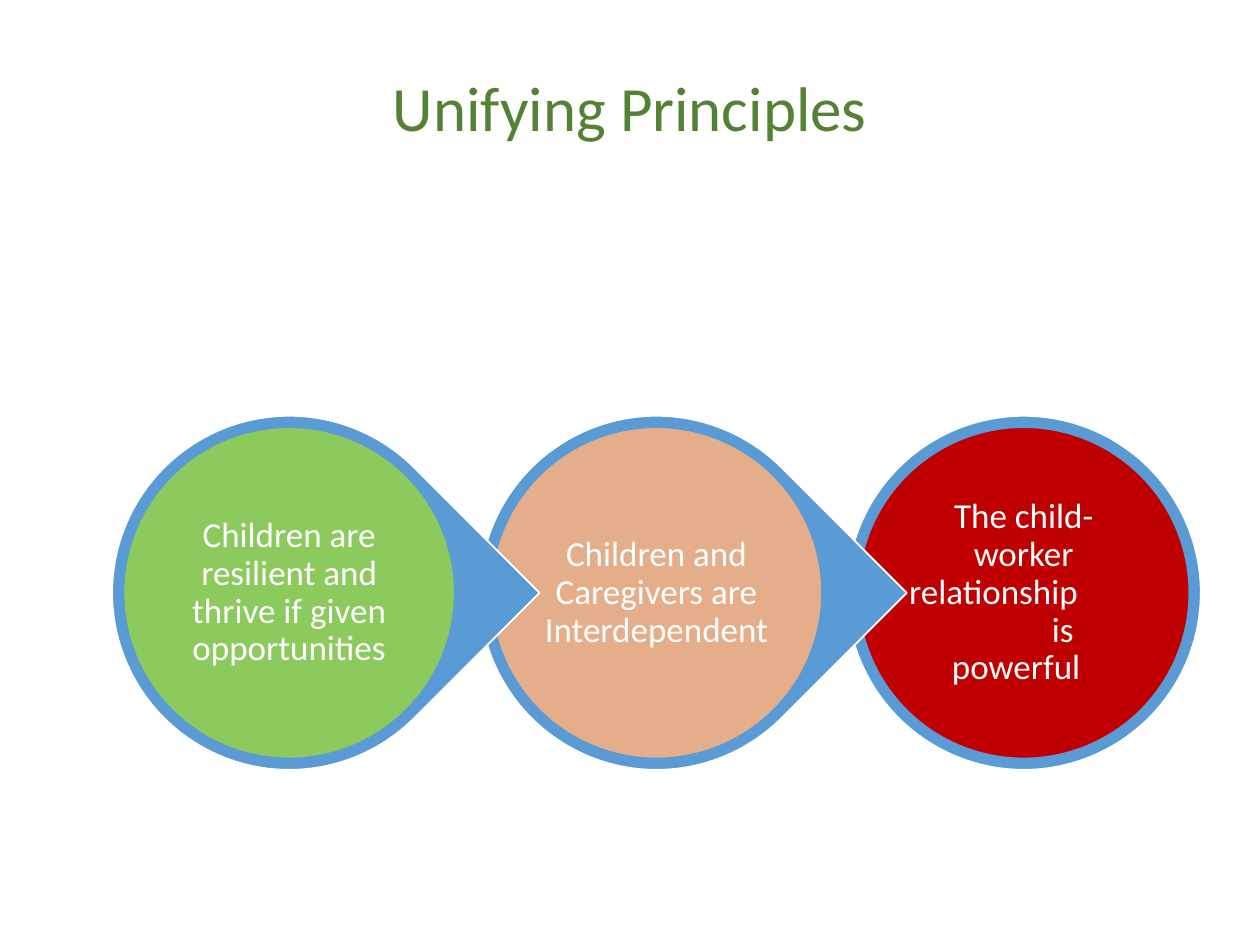
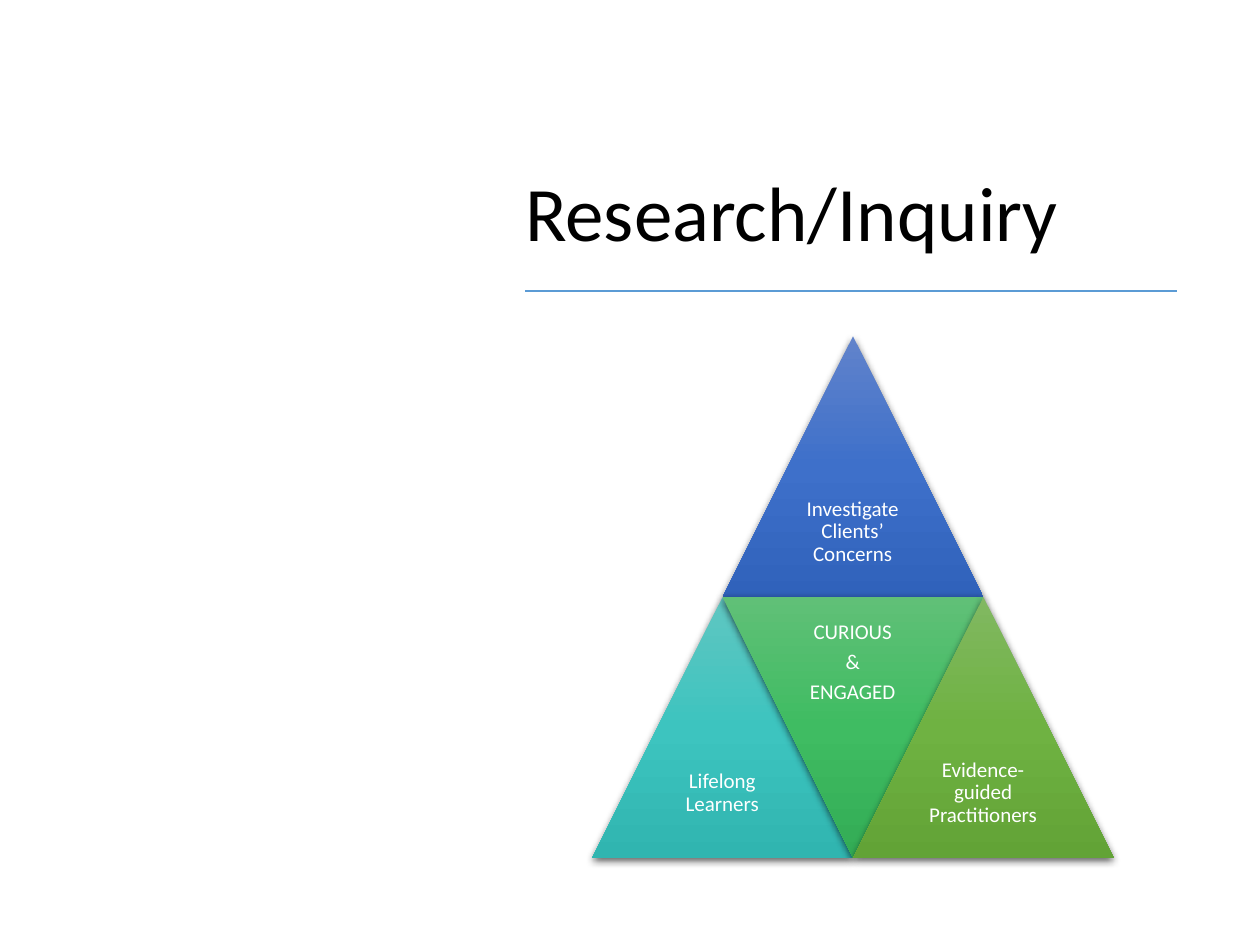
from dataclasses import dataclass

from pptx import Presentation
from pptx.dml.color import RGBColor
from pptx.enum.shapes import MSO_CONNECTOR as Connector, MSO_SHAPE as Preset
from pptx.enum.text import MSO_ANCHOR as Anchor, PP_ALIGN as Align
from pptx.oxml import parse_xml
from pptx.oxml.ns import nsdecls, qn
from pptx.util import Emu, Pt

EMU_PER_PX = 4572


@dataclass(frozen=True)
class Theme:
    font: str = "Calibri"
    white: str = "FFFFFF"
    black: str = "000000"
    blue: str = "5B9BD5"
    title_green: str = "548235"
    light_green: str = "92D050"
    orange: str = "F4B183"
    red: str = "C00000"
    title_size: int = 36
    section_size: int = 44
    principle_size: int = 20
    pyramid_size: int = 12
    line_spacing: float = 0.9
    gap_share: float = 0.35


THEME = Theme()


@dataclass(frozen=True)
class Line:
    text: str
    align: Align = Align.CENTER
    indent: int = 0


@dataclass(frozen=True)
class Principle:
    lines: tuple[Line, ...]
    color: str
    opacity: int = 90
    pointed: bool = True


@dataclass(frozen=True)
class PyramidPart:
    lines: tuple[Line, ...]
    half_steps: int
    row: int
    gradient: tuple[str, str, str]
    inverted: bool = False


PRINCIPLES = (
    Principle((Line("Children are resilient and thrive if given opportunities"),),
              THEME.light_green),
    Principle((Line("Children and Caregivers are Interdependent"),), THEME.orange),
    Principle((Line("The child-worker"),
               Line("relationship", Align.LEFT),
               Line("is", indent=124),
               Line("powerful", Align.LEFT, 68)),
              THEME.red, opacity=100, pointed=False),
)

PYRAMID = (
    PyramidPart((Line("Investigate Clients’ Concerns"),), 1, 0,
                ("6183CB", "3E70CA", "3062BB")),
    PyramidPart((Line("Lifelong Learners"),), 0, 1,
                ("60C6C1", "3DC4BF", "30B5B0")),
    PyramidPart((Line("CURIOUS"), Line("&"), Line("ENGAGED")), 1, 1,
                ("60C077", "3FBC62", "33AC55"), inverted=True),
    PyramidPart((Line("Evidence-guided Practitioners"),), 2, 1,
                ("81B861", "6FB242", "62A336")),
)


def px(length: int) -> Emu:
    return Emu(length * EMU_PER_PX)


def box(left: int, top: int, width: int, height: int) -> tuple[Emu, ...]:
    return px(left), px(top), px(width), px(height)


def centered_square(center_x: int, center_y: int, size: int) -> tuple[Emu, ...]:
    return box(center_x - size // 2, center_y - size // 2, size, size)


def add_text(slide, lines: tuple[Line, ...], area: tuple[Emu, ...], *, size: int,
             color: str = THEME.white, anchor: Anchor = Anchor.MIDDLE,
             inset: int | None = None, gap: float = 0) -> None:
    frame = slide.shapes.add_textbox(*area).text_frame
    frame.word_wrap = True
    frame.vertical_anchor = anchor
    if inset is not None:
        frame.margin_left = frame.margin_right = px(inset)
        frame.margin_top = frame.margin_bottom = px(inset)
    for index, line in enumerate(lines):
        paragraph = frame.add_paragraph() if index else frame.paragraphs[0]
        paragraph.alignment = line.align
        paragraph.line_spacing = THEME.line_spacing
        paragraph.space_after = Pt(size * gap)
        if line.indent:
            paragraph._p.get_or_add_pPr().set("marL", str(px(line.indent)))
        run = paragraph.add_run()
        run.text = line.text
        run.font.name = THEME.font
        run.font.size = Pt(size)
        run.font.color.rgb = RGBColor.from_string(color)


def add_disc(slide, preset: Preset, area: tuple[Emu, ...], fill: str, outline: str,
             *, opacity: int = 100, rotation: int = 0) -> None:
    disc = slide.shapes.add_shape(preset, *area)
    disc.shadow.inherit = False
    disc.rotation = rotation
    disc.fill.solid()
    disc.fill.fore_color.rgb = RGBColor.from_string(fill)
    disc.line.color.rgb = RGBColor.from_string(outline)
    disc.line.width = Pt(1)
    if opacity < 100:
        tint = disc._element.spPr.find(qn("a:solidFill"))[0]
        tint.append(parse_xml(f'<a:alpha {nsdecls("a")} val="{opacity * 1000}"/>'))


def add_triangle(slide, area: tuple[Emu, ...], colors: tuple[str, str, str],
                 inverted: bool) -> None:
    triangle = slide.shapes.add_shape(Preset.ISOSCELES_TRIANGLE, *area)
    triangle.rotation = 180 if inverted else 0
    triangle.line.fill.background()
    triangle.shadow.inherit = False
    triangle.fill.gradient()
    properties = triangle._element.spPr
    stops = "".join(
        f'<a:gs pos="{index * 50000}"><a:srgbClr val="{color}"/></a:gs>'
        for index, color in enumerate(colors))
    properties.replace(properties.find(qn("a:gradFill")), parse_xml(
        f'<a:gradFill {nsdecls("a")} rotWithShape="0"><a:gsLst>{stops}</a:gsLst>'
        '<a:lin ang="5400000" scaled="0"/></a:gradFill>'))
    properties.find(qn("a:effectLst")).append(parse_xml(
        f'<a:outerShdw {nsdecls("a")} blurRad="{Pt(4.5)}" dist="{Pt(1.5)}" '
        f'dir="5400000" algn="ctr" rotWithShape="0"><a:srgbClr val="{THEME.black}">'
        '<a:alpha val="63000"/></a:srgbClr></a:outerShdw>'))


def build_principles(slide) -> None:
    add_text(slide, (Line("Unifying Principles"),), box(100, 34, 1800, 284),
             size=THEME.title_size, color=THEME.title_green)
    first_center, step, center_y = 459, 583, 941
    for index, principle in reversed(list(enumerate(PRINCIPLES))):
        center_x = first_center + index * step
        add_disc(slide, Preset.TEAR if principle.pointed else Preset.OVAL,
                 centered_square(center_x, center_y, 562), THEME.blue, THEME.white,
                 rotation=45 if principle.pointed else 0)
        add_disc(slide, Preset.OVAL, centered_square(center_x, center_y, 526),
                 principle.color, THEME.blue, opacity=principle.opacity)
        add_text(slide, principle.lines, centered_square(center_x, center_y, 376),
                 size=THEME.principle_size, inset=6)


def build_research(slide) -> None:
    add_text(slide, (Line("Research/Inquiry", Align.LEFT),), box(814, 138, 1080, 282),
             size=THEME.section_size, color=THEME.black, anchor=Anchor.BOTTOM)
    rule = slide.shapes.add_connector(Connector.STRAIGHT, px(834), px(462),
                                      px(1868), px(462))
    rule.line.color.rgb = RGBColor.from_string(THEME.blue)
    rule.line.width = Pt(1.5)
    rule._element.spPr.append(parse_xml(f'<a:effectLst {nsdecls("a")}/>'))
    left, top, side = 940, 534, 414
    half = side // 2
    for part in PYRAMID:
        part_left = left + part.half_steps * half
        part_top = top + part.row * side
        add_triangle(slide, box(part_left, part_top, side, side), part.gradient,
                     part.inverted)
        text_top = part_top if part.inverted else part_top + half
        add_text(slide, part.lines, box(part_left + side // 4, text_top, half, half),
                 size=THEME.pyramid_size, inset=10, gap=THEME.gap_share)


def main() -> None:
    deck = Presentation()
    deck.slide_width, deck.slide_height = px(2000), px(1500)
    blank = deck.slide_layouts[6]
    for build in (build_principles, build_research):
        build(deck.slides.add_slide(blank))
    deck.save("out.pptx")


if __name__ == "__main__":
    main()
